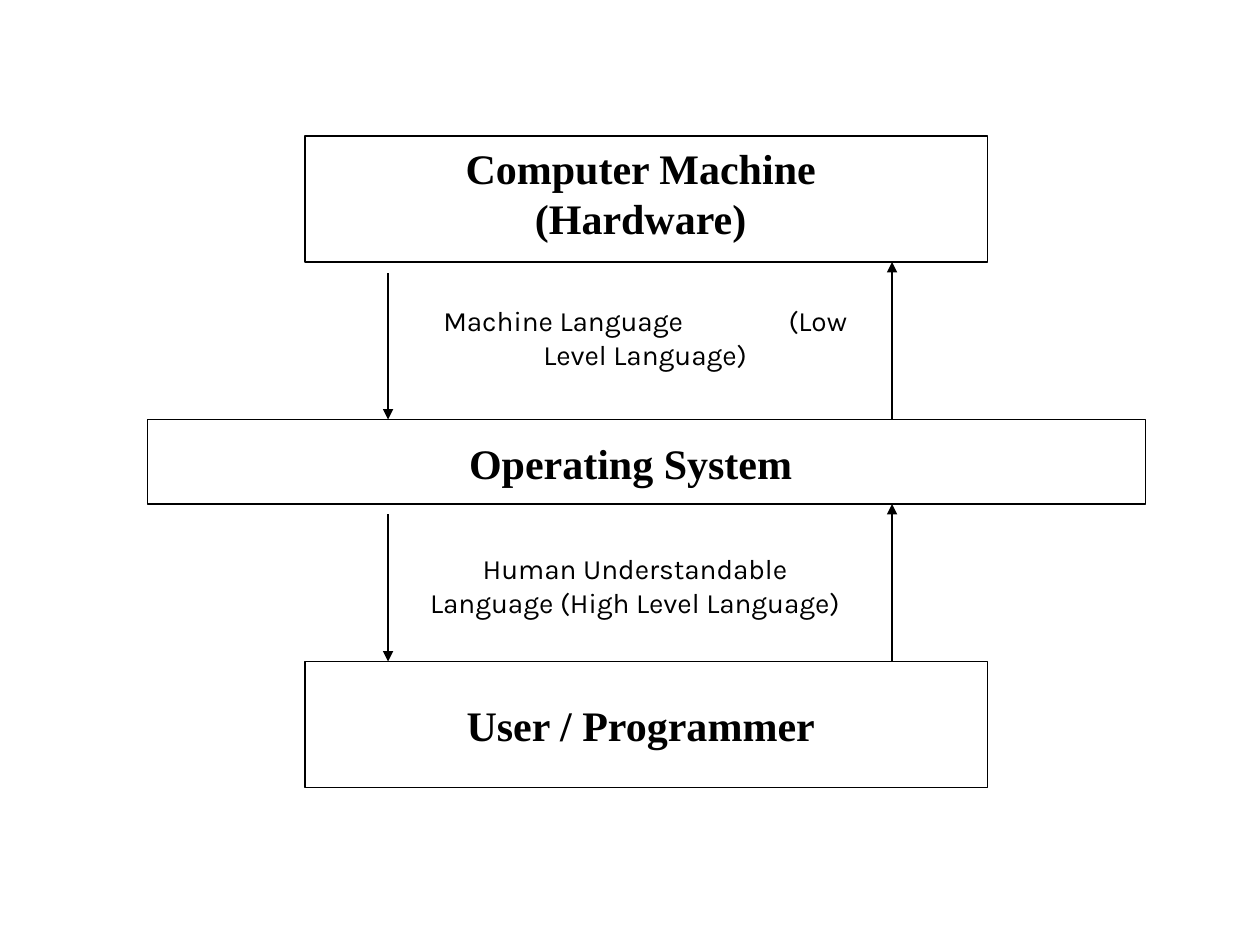
from lxml import etree
from pptx import Presentation
from pptx import util as u
from pptx.dml import color
from pptx.enum import shapes, text
from pptx.oxml import ns

INCH = 2.54
THEME = {
    "ink": color.RGBColor(0, 0, 0),
    "heading_font": "Times New Roman",
    "label_font": "Karla",
    "heading_size": 24,
    "label_size": 16,
    "line": 0.75,
}


def add_text(content, left, top, width, height, font, size, bold=False, tab=None):
    box = slide.shapes.add_textbox(*[u.Cm(n * INCH) for n in (left, top, width, height)])
    frame = box.text_frame
    frame.word_wrap = True
    paragraph = frame.paragraphs[0]
    paragraph.alignment = text.PP_ALIGN.CENTER
    if tab:
        stops = etree.SubElement(paragraph._p.get_or_add_pPr(), ns.qn("a:tabLst"))
        etree.SubElement(stops, ns.qn("a:tab"), pos=str(u.Cm(tab * INCH)), algn="l")
    run = paragraph.add_run()
    run.text = content
    run.font.name = font
    run.font.size = u.Pt(size)
    run.font.bold = bold
    run.font.color.rgb = THEME["ink"]


presentation = Presentation()
presentation.slide_width = u.Cm(10 * INCH)
presentation.slide_height = u.Cm(7.5 * INCH)
slide = presentation.slides.add_slide(presentation.slide_layouts[6])

layers = [
    ("Computer Machine (Hardware)", (2.42, 1.08, 5.42, 1), (2.75, 1.08, 4.67, 0.9)),
    ("Operating System", (1.17, 3.33, 7.92, 0.67), (2.67, 3.42, 4.67, 0.5)),
    ("User / Programmer", (2.42, 5.25, 5.42, 1), (2.75, 5.5, 4.67, 0.5)),
]
for name, frame_place, text_place in layers:
    shape = slide.shapes.add_shape(
        shapes.MSO_SHAPE.RECTANGLE, *[u.Cm(n * INCH) for n in frame_place])
    shape.shadow.inherit = False
    shape.fill.background()
    shape.line.color.rgb = THEME["ink"]
    shape.line.width = u.Pt(THEME["line"])
    add_text(name, *text_place, font=THEME["heading_font"],
             size=THEME["heading_size"], bold=True)

labels = [
    ("Machine Language\t(Low Level Language)", 3.33, 2.36, 2.74),
    ("Human Understandable Language (High Level Language)", 3.25, 4.33, None),
]
for label, left, top, tab in labels:
    add_text(label, left, top, 3.58, 0.64, font=THEME["label_font"],
             size=THEME["label_size"], tab=tab)

down, up = 3.08, 7.08
arrows = [(down, 2.17, 3.33), (up, 3.33, 2.08), (down, 4.08, 5.25), (up, 5.25, 4)]
for x, start, end in arrows:
    arrow = slide.shapes.add_connector(
        shapes.MSO_CONNECTOR.STRAIGHT, *[u.Cm(n * INCH) for n in (x, start, x, end)])
    arrow.line.color.rgb = THEME["ink"]
    arrow.line.width = u.Pt(THEME["line"])
    etree.SubElement(arrow.line._get_or_add_ln(), ns.qn("a:tailEnd"), type="triangle")
    etree.SubElement(arrow._element.spPr, ns.qn("a:effectLst"))

presentation.save("out.pptx")
